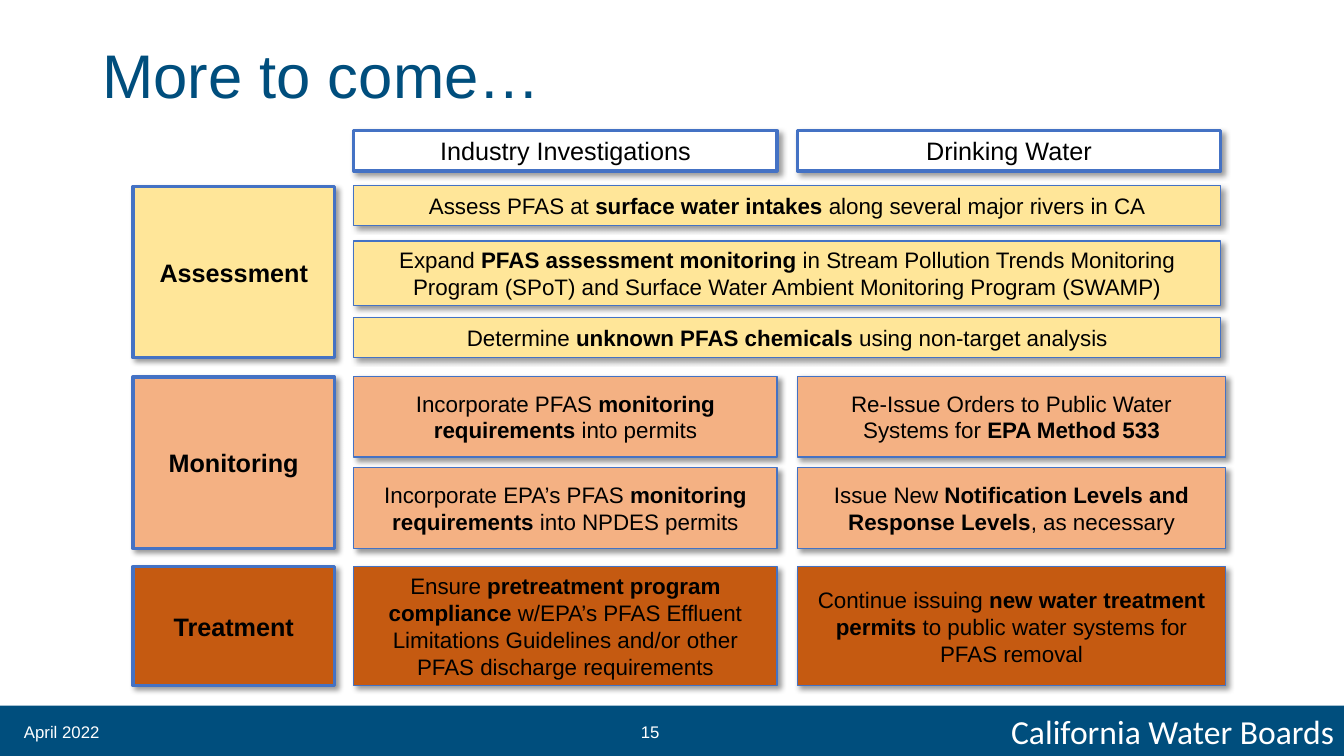
from lxml import etree
from pptx import Presentation
from pptx import util as u
from pptx.dml import color
from pptx.enum import shapes, text
from pptx.oxml import ns

Pt = u.Pt
RGB = color.RGBColor
NAVY = RGB(0x00, 0x4E, 0x7D)
BLUE = RGB(0x44, 0x72, 0xC4)
WHITE = RGB(0xFF, 0xFF, 0xFF)
BLACK = RGB(0x00, 0x00, 0x00)
SAND = RGB(0xFF, 0xE6, 0x99)
PEACH = RGB(0xF4, 0xB1, 0x83)
RUST = RGB(0xC5, 0x5A, 0x11)

WIDE, HIGH = 960, 540
LEFT, SIDE = 95, 144        # category column
GRID, STEP = 252.7, 316.8   # first content column and column pitch
COL, LAST, FULL = 302.4, 306, 619.2

SHADE = (
    '<a:effectLst xmlns:a="%s"><a:outerShdw blurRad="%d" dist="%d" dir="2700000"'
    ' algn="tl" rotWithShape="0"><a:srgbClr val="000000"><a:alpha val="40000"/>'
    '</a:srgbClr></a:outerShdw></a:effectLst>'
    % (ns.nsuri("a"), Pt(4), Pt(3)))


def write(shape, words, size, ink, align=text.PP_ALIGN.LEFT,
          anchor=text.MSO_ANCHOR.MIDDLE, face="Arial"):
    """Fill a shape with one paragraph; text between asterisks is bold."""
    frame = shape.text_frame
    frame.word_wrap = True
    frame.vertical_anchor = anchor
    para = frame.paragraphs[0]
    para.alignment = align
    para.font.name, para.font.size = face, Pt(size)
    para.font.color.rgb = ink
    for i, part in enumerate(words.split("*")):
        if part:
            run = para.add_run()
            run.text = part
            if i % 2:
                run.font.bold = True
    return para


def label(slide, box, words, size, ink, **kind):
    shape = slide.shapes.add_textbox(*map(Pt, box))
    return write(shape, words, size, ink, **kind)


def block(slide, box, fill):
    shape = slide.shapes.add_shape(shapes.MSO_SHAPE.RECTANGLE, *map(Pt, box))
    shape.shadow.inherit = False
    shape.fill.solid()
    shape.fill.fore_color.rgb = fill
    shape.line.fill.background()
    return shape


def card(slide, box, words, fill, size=16, edge=1):
    shape = block(slide, box, fill)
    shape.line.color.rgb = BLUE
    shape.line.width = Pt(edge)
    props = shape._element.spPr
    props.remove(props.find(ns.qn("a:effectLst")))
    props.append(etree.fromstring(SHADE))
    write(shape, words, size, BLACK, text.PP_ALIGN.CENTER)


def title(slide, box):
    para = label(slide, box, "More to come…", 44, NAVY,
                 anchor=text.MSO_ANCHOR.TOP)
    para.line_spacing = 0.9


def heads(slide, box, names):
    x, y, w, h = box
    for i, name in enumerate(names):
        card(slide, (x + i * STEP, y, w, h), name, WHITE, 18, 2.25)


def band(slide, box, name, fill, rows):
    """Category box, then rows of (offset, height, texts) beside it."""
    x, y, w, h = box
    card(slide, box, f"*{name}*", fill, 18, 2.25)
    for drop, tall, items in rows:
        wide = (COL, LAST) if len(items) == 2 else (FULL,)
        for i, words in enumerate(items):
            spot = (x + GRID - LEFT + i * STEP, y + drop, wide[i], tall)
            card(slide, spot, words, fill)


def foot(slide, box):
    x, y, w, h = box
    bar = block(slide, box, NAVY)
    write(bar, "California Water Boards", 24, WHITE,
          text.PP_ALIGN.RIGHT, face="Calibri")
    label(slide, (x + 10, y + 4.3, 123, 28.8), "April 2022", 12, WHITE)
    label(slide, (x + 450.7, y + 4.3, 54, 28.8), "15", 12, WHITE)


ASSESS = [
    (-0.7, 28.8, ["Assess PFAS at *surface water intakes* along several "
                  "major rivers in CA"]),
    (38.9, 46.1, ["Expand *PFAS assessment monitoring* in Stream Pollution "
                  "Trends Monitoring Program (SPoT) and Surface Water Ambient "
                  "Monitoring Program (SWAMP)"]),
    (93.6, 28.8, ["Determine *unknown PFAS chemicals* using non-target "
                  "analysis"]),
]
MONITOR = [
    (-0.5, 57.6, ["Incorporate PFAS *monitoring requirements* into permits",
                  "Re-Issue Orders to Public Water Systems for "
                  "*EPA Method 533*"]),
    (64.8, 57.6, ["Incorporate EPA’s PFAS *monitoring requirements* into "
                  "NPDES permits",
                  "Issue New *Notification Levels and Response Levels*, "
                  "as necessary"]),
]
TREAT = [
    (0, 85, ["Ensure *pretreatment program compliance* w/EPA’s PFAS Effluent "
             "Limitations Guidelines and/or other PFAS discharge requirements",
             "Continue issuing *new water treatment permits* to public water "
             "systems for PFAS removal"]),
]


def main():
    deck = Presentation()
    deck.slide_width, deck.slide_height = Pt(WIDE), Pt(HIGH)
    slide = deck.slides.add_slide(deck.slide_layouts[6])
    # Frame
    foot(slide, (0, 504, WIDE, 36))
    title(slide, (66, 28.8, 828, 60))
    # Grid
    heads(slide, (GRID, 93.4, COL, 28.8),
          ["Industry Investigations", "Drinking Water"])
    band(slide, (LEFT, 133.2, SIDE, 122.4), "Assessment", SAND, ASSESS)
    band(slide, (LEFT, 269.3, SIDE, 122.4), "Monitoring", PEACH, MONITOR)
    band(slide, (LEFT, 404.8, SIDE, 85), "Treatment", RUST, TREAT)
    deck.save("out.pptx")


if __name__ == "__main__":
    main()
